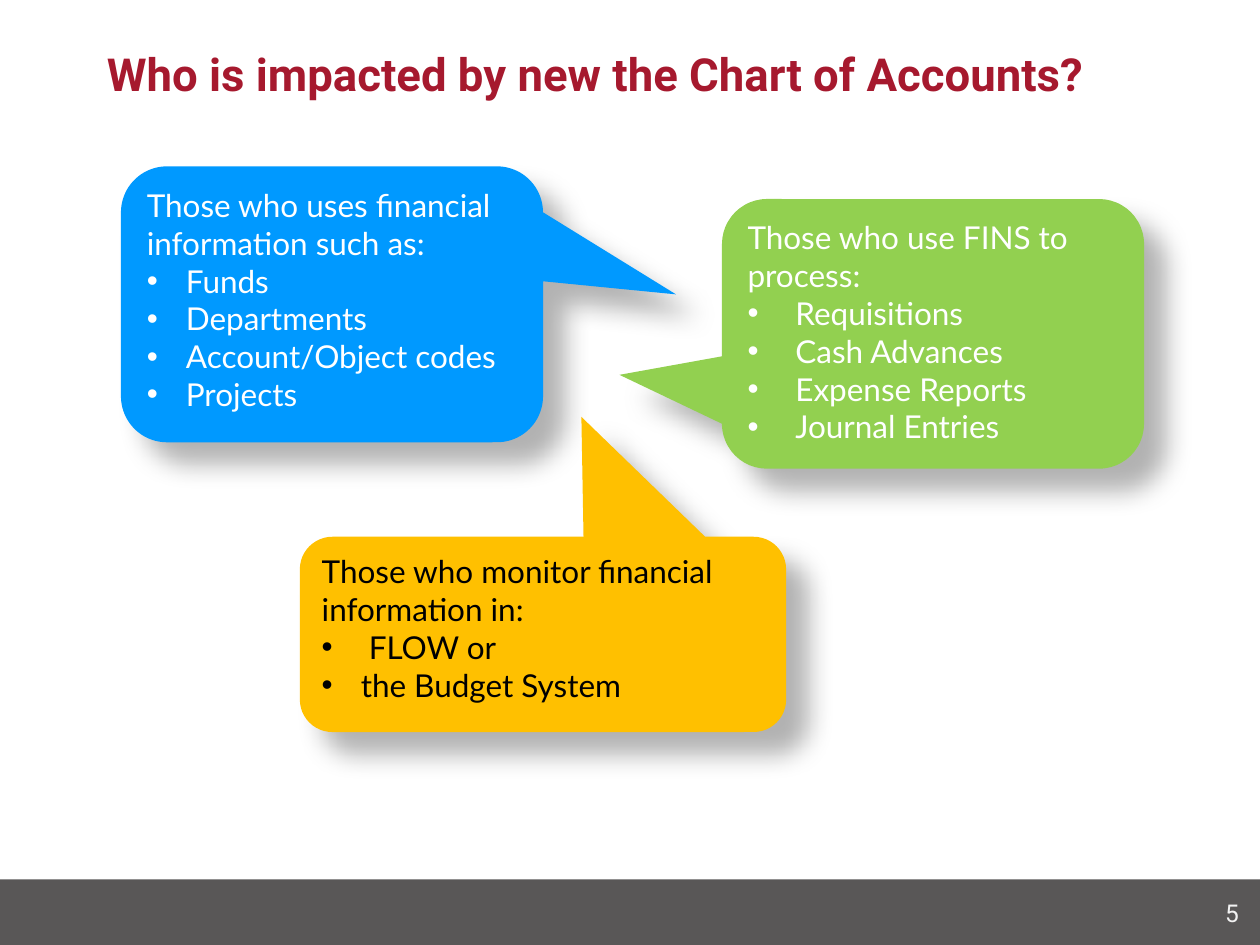
"""Build a slide with three callouts on who the new Chart of Accounts affects."""
from lxml import etree
from pptx import Presentation, util as u
from pptx.dml.color import RGBColor
from pptx.enum import shapes, text
from pptx.oxml import ns

TITLE = "Who is impacted by new the Chart of Accounts?"
CALLOUTS = [
    dict(box=(5.73, 1.58, 3.35, 2.14), tail=(-0.743, 0.152), fill="92D050",
         color="FFFFFF", indent=0.38, lead="Those who use FINS to process:",
         items=["Requisitions", "Cash Advances", "Expense Reports", "Journal Entries"]),
    dict(box=(0.96, 1.32, 3.35, 2.19), tail=(0.815, -0.036), fill="0099FF",
         color="FFFFFF", indent=0.31,
         lead="Those who uses financial information such as:",
         items=["Funds", "Departments", "Account/Object codes", "Projects"]),
    dict(box=(2.38, 4.26, 3.86, 1.55), tail=(0.079, -1.114), fill="FFC000",
         color="000000", indent=0.31,
         lead="Those who monitor financial information in:",
         items=[" FLOW or", "the Budget System"]),
]


def rgb(value):
    return RGBColor.from_string(value)


def sub(parent, tag, **attrs):
    return etree.SubElement(parent, ns.qn(tag), {k: str(v) for k, v in attrs.items()})


def style(p, size, font, color, bold=False):
    p.font.size, p.font.name, p.font.bold = u.Pt(size), font, bold
    p.font.color.rgb = rgb(color)


def add_shape(s, kind, box, fill):
    sp = s.shapes.add_shape(kind, *map(u.Inches, box))
    sp.shadow.inherit = False
    sp.fill.solid()
    sp.fill.fore_color.rgb = rgb(fill)
    sp.line.fill.background()
    return sp


def add_label(s, box, words, size, color, bold=False, align=text.PP_ALIGN.LEFT,
              anchor=text.MSO_ANCHOR.TOP):
    tf = s.shapes.add_textbox(*map(u.Inches, box)).text_frame
    tf.word_wrap, tf.vertical_anchor = True, anchor
    p = tf.paragraphs[0]
    p.text, p.alignment = words, align
    style(p, size, "Roboto", color, bold)


def add_shadow(sp):
    effects = sp._element.spPr.find(ns.qn("a:effectLst"))
    shadow = sub(effects, "a:outerShdw", blurRad=u.Pt(15), dist=u.Pt(18),
                 dir=45 * 60000, algn="tl", rotWithShape=0)
    sub(sub(shadow, "a:srgbClr", val="000000"), "a:alpha", val=30000)


def add_bullet(p, indent):
    pPr = p._p.get_or_add_pPr()
    pPr.set("marL", str(u.Inches(indent)))
    pPr.set("indent", str(-u.Inches(indent)))
    sub(pPr, "a:buFont", typeface="Arial")
    sub(pPr, "a:buChar", char="•")


def add_callout(s, box, tail, fill, color, indent, lead, items):
    sp = add_shape(s, shapes.MSO_SHAPE.ROUNDED_RECTANGULAR_CALLOUT, box, fill)
    for i, value in enumerate((*tail, 0.167)):
        sp.adjustments[i] = value
    add_shadow(sp)
    tf = sp.text_frame
    tf.word_wrap, tf.vertical_anchor = True, text.MSO_ANCHOR.TOP
    for i, words in enumerate([lead, *items]):
        p = tf.add_paragraph() if i else tf.paragraphs[0]
        p.text, p.alignment = words, text.PP_ALIGN.LEFT
        if i:
            add_bullet(p, indent)
        style(p, 18, "Lato", color)


def main():
    prs = Presentation()
    prs.slide_width, prs.slide_height = u.Inches(10), u.Inches(7.5)
    s = prs.slides.add_slide(prs.slide_layouts[6])
    add_shape(s, shapes.MSO_SHAPE.RECTANGLE, (0, 6.98, 10, 0.52), "595757")
    add_label(s, (0.75, 0.21, 8.5, 0.75), TITLE, 26, "A6192E", bold=True,
              anchor=text.MSO_ANCHOR.MIDDLE)
    add_label(s, (9.32, 7.08, 0.61, 0.4), "5", 14, "F2F2F2",
              align=text.PP_ALIGN.RIGHT)
    for callout in CALLOUTS:
        add_callout(s, **callout)
    prs.save("out.pptx")


if __name__ == "__main__":
    main()
